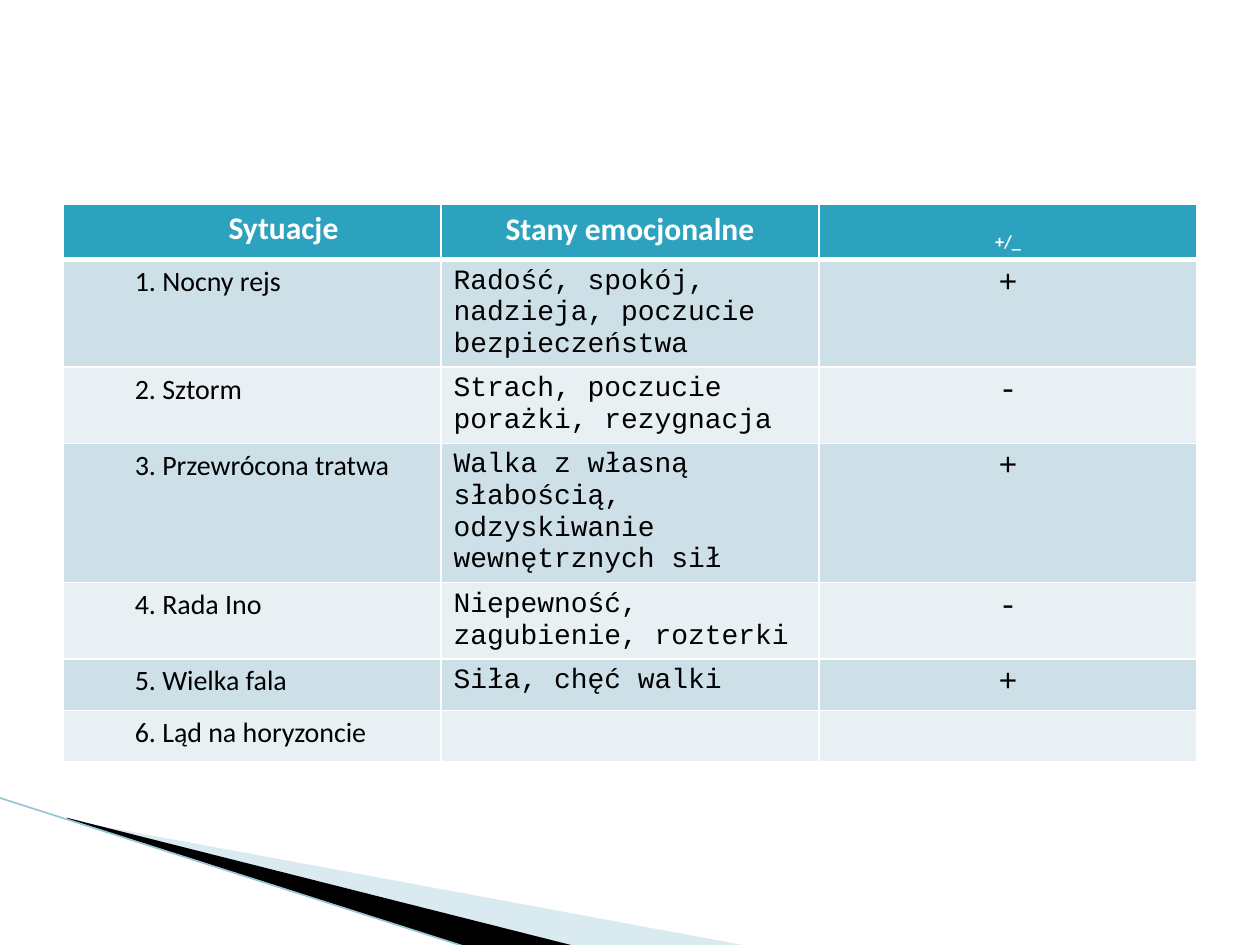
from dataclasses import dataclass
from typing import Optional

from lxml import etree
from pptx import Presentation
from pptx.dml.color import RGBColor
from pptx.enum.shapes import MSO_CONNECTOR
from pptx.enum.text import PP_ALIGN
from pptx.oxml.ns import qn
from pptx.util import Inches, Pt

LEFT, CENTER = PP_ALIGN.LEFT, PP_ALIGN.CENTER
STRAIGHT = MSO_CONNECTOR.STRAIGHT


@dataclass(frozen=True)
class Theme:
    header_fill: str = "2DA2BF"
    bands: tuple[str, str] = ("CDE0E8", "E8F0F4")
    white: str = "FFFFFF"
    black: str = "000000"
    pale_wedge: str = "A0CBDC"
    edge: str = "97C5D8"
    body_font: str = "Calibri"
    mono_font: str = "Courier New"
    large: int = 18
    regular: int = 16


THEME = Theme()


@dataclass(frozen=True)
class TextStyle:
    font: str
    size: int
    color: str
    align: PP_ALIGN = LEFT
    bold: bool = False
    indented: bool = False
    baseline: int = 0


@dataclass(frozen=True)
class Wedge:
    points: tuple[tuple[float, float], ...]
    color: str
    opacity: Optional[int] = None


@dataclass(frozen=True)
class Situation:
    name: str
    emotions: str = ""
    sign: str = ""


HEADINGS = ("Sytuacje", "Stany emocjonalne", "+/_")
HEADING_STYLES = tuple(
    TextStyle(THEME.body_font, THEME.large, THEME.white, CENTER, True,
              indented, baseline)
    for indented, baseline in ((True, 0), (False, 0), (False, -25000))
)
BODY_STYLES = (
    TextStyle(THEME.body_font, THEME.regular, THEME.black, indented=True),
    TextStyle(THEME.mono_font, THEME.regular, THEME.black),
    TextStyle(THEME.mono_font, THEME.large, THEME.black, CENTER),
)
SITUATIONS = (
    Situation("1. Nocny rejs",
              "Radość, spokój, nadzieja, poczucie bezpieczeństwa", "+"),
    Situation("2. Sztorm", "Strach, poczucie porażki, rezygnacja", "-"),
    Situation("3. Przewrócona tratwa",
              "Walka z własną słabością, odzyskiwanie wewnętrznych sił", "+"),
    Situation("4. Rada Ino", "Niepewność, zagubienie, rozterki", "-"),
    Situation("5. Wielka fala", "Siła, chęć walki", "+"),
    Situation("6. Ląd na horyzoncie"),
)
WEDGES = (
    Wedge(((0.55, 6.51), (5.95, 7.51), (4.56, 7.51), (0.55, 6.5)),
          THEME.pale_wedge, 40),
    Wedge(((0.53, 6.49), (4.57, 7.51), (3.72, 7.52), (0.54, 6.5)),
          THEME.black),
)


def rgb(color: str) -> RGBColor:
    return RGBColor.from_string(color)


def draw_wedge(slide, wedge: Wedge) -> None:
    start, *rest = [(Inches(x), Inches(y)) for x, y in wedge.points]
    builder = slide.shapes.build_freeform(*start)
    builder.add_line_segments(rest, close=True)
    shape = builder.convert_to_shape()
    shape.shadow.inherit = False
    shape.line.fill.background()
    shape.fill.solid()
    shape.fill.fore_color.rgb = rgb(wedge.color)
    if wedge.opacity is not None:
        color = shape._element.spPr.find(f".//{qn('a:srgbClr')}")
        etree.SubElement(color, qn("a:alpha"), val=str(wedge.opacity * 1000))


def draw_edge(slide) -> None:
    edge = slide.shapes.add_connector(
        STRAIGHT, Inches(-0.01), Inches(6.33), Inches(3.71), Inches(7.52))
    edge.line.color.rgb = rgb(THEME.edge)
    edge.line.width = Pt(0.95)
    etree.SubElement(edge._element.spPr, qn("a:effectLst"))


def set_borders(cell, top: int = 1, bottom: int = 1) -> None:
    """Draw white borders; widths are in points."""
    properties = cell._tc.get_or_add_tcPr()
    for side, width in (("L", 1), ("R", 1), ("T", top), ("B", bottom)):
        border = etree.SubElement(properties, qn(f"a:ln{side}"),
                                  w=str(Pt(width)))
        fill = etree.SubElement(border, qn("a:solidFill"))
        etree.SubElement(fill, qn("a:srgbClr"), val=THEME.white)


def write_cell(cell, text: str, style: TextStyle) -> None:
    paragraph = cell.text_frame.paragraphs[0]
    if not text:
        return
    paragraph.text = text
    paragraph.alignment = style.align
    if style.indented:
        cell.margin_left = cell.margin_right = Inches(0.07)
        cell.margin_top = cell.margin_bottom = 0
        paragraph.line_spacing = 1.15
        paragraph._p.get_or_add_pPr().set("marL", str(Inches(0.5)))
    font = paragraph.runs[0].font
    font.name = style.font
    font.size = Pt(style.size)
    font.bold = style.bold
    font.color.rgb = rgb(style.color)
    if style.baseline:
        font._element.set("baseline", str(style.baseline))


def draw_table(slide) -> None:
    rows = [HEADINGS] + [(s.name, s.emotions, s.sign) for s in SITUATIONS]
    row_height = Inches(0.41)
    table = slide.shapes.add_table(
        len(rows), len(HEADINGS), Inches(0.5), Inches(1.62),
        Inches(9), row_height * len(rows)).table
    table.horz_banding = False
    for row_index, texts in enumerate(rows):
        table.rows[row_index].height = row_height
        is_header = row_index == 0
        styles = HEADING_STYLES if is_header else BODY_STYLES
        fill = THEME.header_fill if is_header else THEME.bands[(row_index - 1) % 2]
        for column, (text, style) in enumerate(zip(texts, styles)):
            cell = table.cell(row_index, column)
            set_borders(cell, top=3 if row_index == 1 else 1,
                        bottom=3 if is_header else 1)
            cell.fill.solid()
            cell.fill.fore_color.rgb = rgb(fill)
            write_cell(cell, text, style)


def main() -> None:
    presentation = Presentation()
    presentation.slide_width = Inches(10)
    presentation.slide_height = Inches(7.5)
    slide = presentation.slides.add_slide(presentation.slide_layouts[6])
    for wedge in WEDGES:
        draw_wedge(slide, wedge)
    draw_edge(slide)
    draw_table(slide)
    presentation.save("out.pptx")


if __name__ == "__main__":
    main()
